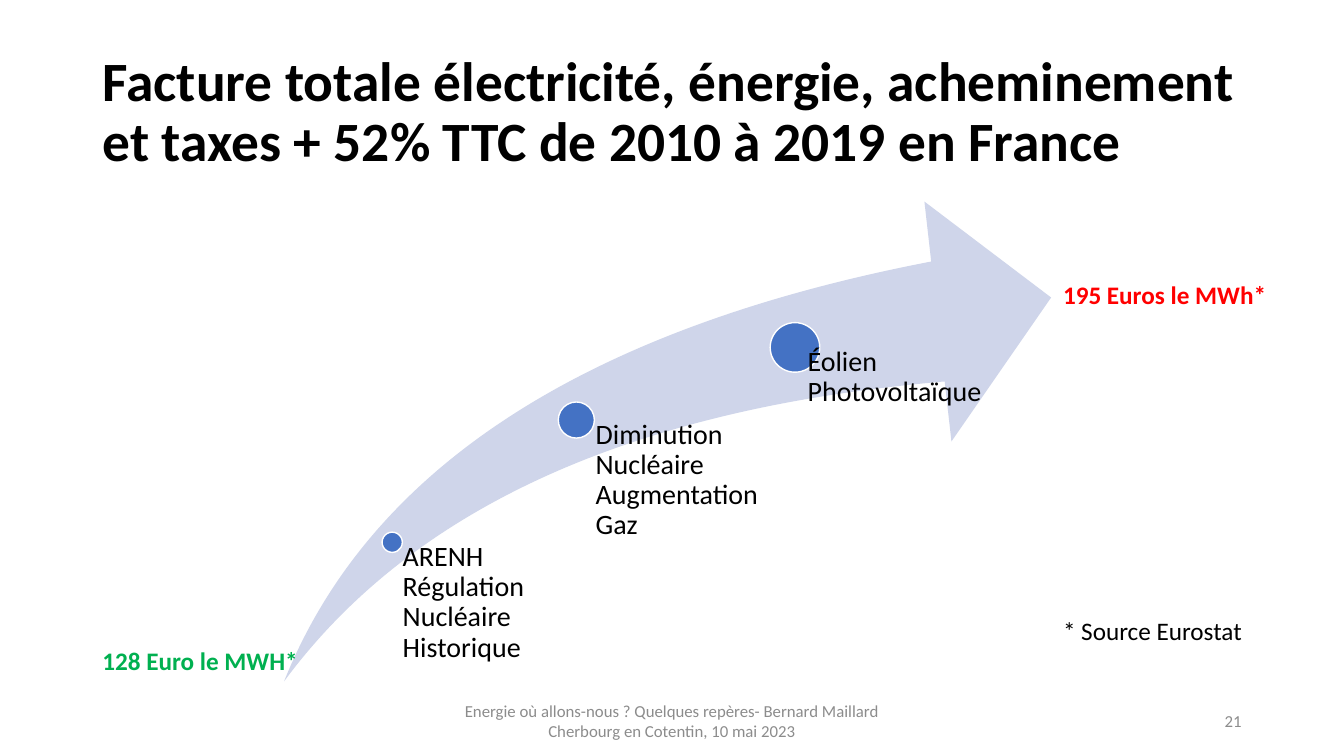
from dataclasses import dataclass, field
from typing import Any

from pptx import Presentation
from pptx.dml.color import RGBColor
from pptx.enum.shapes import MSO_SHAPE
from pptx.enum.text import MSO_ANCHOR, MSO_AUTO_SIZE, PP_ALIGN
from pptx.util import Cm, Pt

FONT = "Calibri"
BLACK, GREY, WHITE = "000000", "8C8C8C", "FFFFFF"
GREEN, RED = "00B050", "FF0000"
ARROW_FILL, DOT_FILL = "CFD5EA", "4472C4"
ARROW_LEFT, ARROW_TOP, ARROW_WIDTH, ARROW_HEIGHT = 7.16, 5.08, 19.33, 12.09
INSET_PER_DIAMETER = 0.53


@dataclass
class Milestone:
    text: str
    left: float
    top: float
    diameter: float
    text_left: float
    text_width: float


@dataclass
class Label:
    text: str
    left: float
    top: float
    width: float
    size: float
    color: str
    bold: bool = False
    frame: dict[str, Any] = field(default_factory=dict)
    para: dict[str, Any] = field(default_factory=dict)


FOOTER_FRAME = {"word_wrap": True, "vertical_anchor": MSO_ANCHOR.MIDDLE}
PRICE_FRAME = {"word_wrap": False, "auto_size": MSO_AUTO_SIZE.SHAPE_TO_FIT_TEXT}
LABEL_HEIGHT = 1.02

TITLE = "Facture totale électricité, énergie, acheminement et taxes + 52% TTC de 2010 à 2019 en France"

MILESTONES = [
    Milestone("ARENH Régulation Nucléaire Historique", 9.63, 13.41, 0.51, 9.88, 4.5),
    Milestone("Diminution Nucléaire Augmentation Gaz", 14.07, 10.13, 0.91, 14.53, 4.65),
    Milestone("Éolien Photovoltaïque", 19.41, 8.13, 1.25, 19.69, 5.36),
]

LABELS = [
    Label("Energie où allons-nous ? Quelques repères- Bernard Maillard Cherbourg en Cotentin, 10 mai 2023",
          11.22, 17.65, 11.43, 12, GREY, frame=FOOTER_FRAME, para={"alignment": PP_ALIGN.CENTER}),
    Label("21", 23.92, 17.65, 7.62, 12, GREY, frame=FOOTER_FRAME, para={"alignment": PP_ALIGN.RIGHT}),
    Label("128 Euro le MWH*", 2.33, 16.13, 5.49, 18, GREEN, True, PRICE_FRAME),
    Label("195 Euros le MWh*", 26.54, 6.91, 5.69, 18, RED, True, PRICE_FRAME),
    Label("* Source Eurostat", 26.54, 15.39, 5.08, 18, BLACK, False, PRICE_FRAME),
]


def rgb(color: str) -> RGBColor:
    return RGBColor.from_string(color)


def apply_format(target: Any, values: dict[str, Any]) -> None:
    for name, value in values.items():
        setattr(target, name, value)


def write(box: Any, text: str, size: float, color: str, bold: bool,
          frame_format: dict[str, Any], para_format: dict[str, Any]) -> None:
    frame = box.text_frame
    apply_format(frame, frame_format)
    para = frame.paragraphs[0]
    apply_format(para, para_format)
    span = para.add_run()
    span.text = text
    apply_format(span.font, {"name": FONT, "size": Pt(size), "bold": bold})
    span.font.color.rgb = rgb(color)


def draw_title(page: Any) -> None:
    title = page.shapes.title
    apply_format(title, {"left": Cm(2.33), "top": Cm(1.02), "width": Cm(29.21), "height": Cm(3.68)})
    write(title, TITLE, 39.6, BLACK, True,
          {"word_wrap": True, "auto_size": MSO_AUTO_SIZE.NONE, "vertical_anchor": MSO_ANCHOR.MIDDLE},
          {"alignment": PP_ALIGN.LEFT, "line_spacing": 0.9})


def draw_arrow(page: Any) -> None:
    arrow = page.shapes.add_shape(MSO_SHAPE.SWOOSH_ARROW, Cm(ARROW_LEFT), Cm(ARROW_TOP),
                                  Cm(ARROW_WIDTH), Cm(ARROW_HEIGHT))
    arrow.shadow.inherit = False
    arrow.adjustments[0] = 0.25
    arrow.adjustments[1] = 0.25
    arrow.fill.solid()
    arrow.fill.fore_color.rgb = rgb(ARROW_FILL)
    arrow.line.fill.background()


def draw_milestone(page: Any, milestone: Milestone) -> None:
    diameter = milestone.diameter
    dot = page.shapes.add_shape(MSO_SHAPE.OVAL, Cm(milestone.left), Cm(milestone.top),
                                Cm(diameter), Cm(diameter))
    dot.shadow.inherit = False
    dot.fill.solid()
    dot.fill.fore_color.rgb = rgb(DOT_FILL)
    dot.line.color.rgb = rgb(WHITE)
    dot.line.width = Pt(1)

    text_top = milestone.top + diameter / 2
    box = page.shapes.add_textbox(Cm(milestone.text_left), Cm(text_top), Cm(milestone.text_width),
                                  Cm(ARROW_TOP + ARROW_HEIGHT - text_top))
    write(box, milestone.text, 20, BLACK, False,
          {"word_wrap": True, "margin_left": Cm(diameter * INSET_PER_DIAMETER),
           "margin_top": 0, "margin_right": 0, "margin_bottom": 0},
          {"line_spacing": 0.9})


def draw_label(page: Any, label: Label) -> None:
    box = page.shapes.add_textbox(Cm(label.left), Cm(label.top), Cm(label.width), Cm(LABEL_HEIGHT))
    write(box, label.text, label.size, label.color, label.bold, label.frame, label.para)


def main() -> None:
    deck = Presentation()
    apply_format(deck, {"slide_width": Cm(33.87), "slide_height": Cm(19.05)})
    page = deck.slides.add_slide(deck.slide_layouts.get_by_name("Title Only"))
    draw_title(page)
    draw_arrow(page)
    for milestone in MILESTONES:
        draw_milestone(page, milestone)
    for label in LABELS:
        draw_label(page, label)
    deck.save("out.pptx")


if __name__ == "__main__":
    main()
